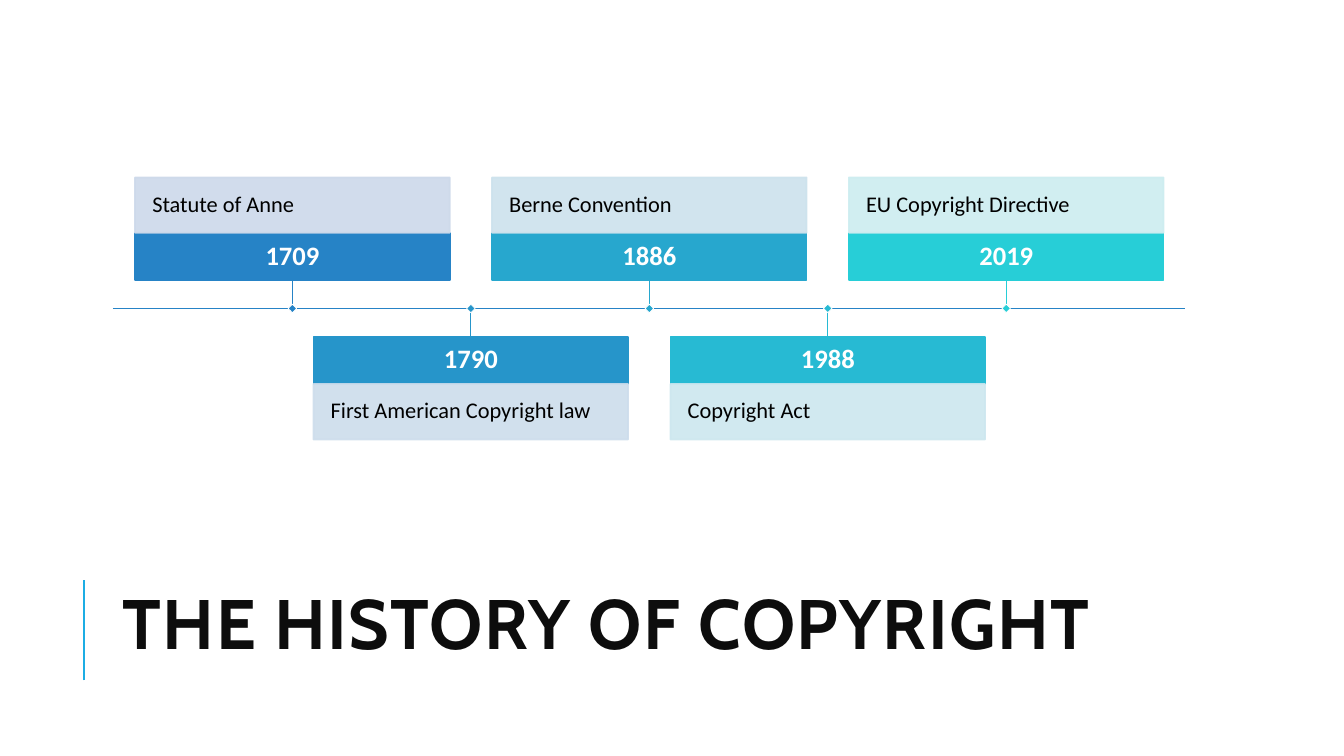
from pptx import Presentation
from pptx.dml.color import RGBColor
from pptx.enum.shapes import MSO_CONNECTOR as Connector, MSO_SHAPE as Shape
from pptx.enum.text import MSO_ANCHOR as Anchor, PP_ALIGN as Align
from pptx.oxml.ns import qn
from pptx.oxml.xmlchemy import OxmlElement
from pptx.util import Pt

PX = 9144  # 100 px to the inch

WHITE = RGBColor(0xFF, 0xFF, 0xFF)
BLACK = RGBColor(0x00, 0x00, 0x00)
TITLE_INK = RGBColor(0x0D, 0x0D, 0x0D)
ACCENT = RGBColor(0x1C, 0xAD, 0xE4)
AXIS = RGBColor(0x26, 0x83, 0xC6)

# Year, event, strong colour, pale colour
EVENTS = [
    ("1709", "Statute of Anne", AXIS, RGBColor(0xCD, 0xD9, 0xEA)),
    ("1790", "First American Copyright law",
     RGBColor(0x26, 0x95, 0xCA), RGBColor(0xCD, 0xDD, 0xEC)),
    ("1886", "Berne Convention",
     RGBColor(0x27, 0xA7, 0xCE), RGBColor(0xCD, 0xE2, 0xED)),
    ("1988", "Copyright Act",
     RGBColor(0x27, 0xBA, 0xD3), RGBColor(0xCD, 0xE7, 0xEF)),
    ("2019", "EU Copyright Directive",
     RGBColor(0x27, 0xCE, 0xD7), RGBColor(0xCD, 0xED, 0xF0)),
]

AXIS_Y = 306
FIRST_LEFT, PITCH, CARD_WIDTH = 134, 177, 312
STEM, YEAR_HEIGHT, EVENT_HEIGHT, MARKER = 28, 47, 55, 6


class TimelineSlide:
    title_font = "Cabin"
    body_font = "Calibri"

    def __init__(self, presentation):
        self.slide = presentation.slides.add_slide(presentation.slide_layouts[6])

    def text(self, shape, words, font, size, color, bold=False,
             align=Align.LEFT, line_spacing=0.9, inset=10, inset_y=None):
        frame = shape.text_frame
        frame.text = words
        frame.word_wrap = True
        frame.vertical_anchor = Anchor.MIDDLE
        frame.margin_left = frame.margin_right = inset * PX
        frame.margin_top = frame.margin_bottom = (
            inset if inset_y is None else inset_y) * PX
        paragraph = frame.paragraphs[0]
        paragraph.alignment = align
        paragraph.line_spacing = line_spacing
        run = paragraph.runs[0]
        run.font.name = font
        run.font.size = Pt(size)
        run.font.bold = bold
        run.font.color.rgb = color
        return run

    def title(self, words, left, top, width, height):
        box = self.slide.shapes.add_textbox(
            left * PX, top * PX, width * PX, height * PX)
        run = self.text(box, words, self.title_font, 50, TITLE_INK, bold=True,
                        line_spacing=0.8, inset_y=5)
        run.font._element.set("spc", "100")

    def rectangle(self, left, top, width, height, fill, line=None,
                  line_width=1.25, opacity=100):
        shape = self.slide.shapes.add_shape(
            Shape.RECTANGLE, left * PX, top * PX, width * PX, height * PX)
        shape.shadow.inherit = False
        shape.fill.solid()
        shape.fill.fore_color.rgb = fill
        shape.line.color.rgb = line or fill
        shape.line.width = Pt(line_width)
        if opacity < 100:
            for color in list(shape._element.spPr.iter(qn("a:srgbClr"))):
                alpha = OxmlElement("a:alpha")
                alpha.set("val", str(opacity * 1000))
                color.append(alpha)
        return shape

    def line(self, x1, y1, x2, y2, color, width):
        connector = self.slide.shapes.add_connector(
            Connector.STRAIGHT, x1 * PX, y1 * PX, x2 * PX, y2 * PX)
        connector.line.color.rgb = color
        connector.line.width = Pt(width)
        connector._element.spPr.append(OxmlElement("a:effectLst"))
        return connector

    def event(self, index, year, name, strong, pale):
        above = index % 2 == 0
        left = FIRST_LEFT + index * PITCH
        center = left + CARD_WIDTH // 2
        if above:
            stem_y = AXIS_Y - STEM
            year_top = stem_y - YEAR_HEIGHT
            event_top = year_top - EVENT_HEIGHT
        else:
            stem_y = year_top = AXIS_Y + STEM
            event_top = year_top + YEAR_HEIGHT

        # Card: year and event name
        year_box = self.rectangle(left, year_top, CARD_WIDTH, YEAR_HEIGHT, strong)
        self.text(year_box, year, self.body_font, 19, WHITE, bold=True,
                  align=Align.CENTER, inset=11)
        event_box = self.rectangle(left, event_top, CARD_WIDTH, EVENT_HEIGHT,
                                   pale, opacity=90)
        self.text(event_box, name, self.body_font, 16, BLACK, inset=17)

        # Stem and marker on the axis
        stem = self.line(center, stem_y, center, AXIS_Y, strong, 0.75)
        stem.begin_connect(year_box, 2 if above else 0)
        marker = self.rectangle(center - MARKER // 2, AXIS_Y - MARKER // 2,
                                MARKER, MARKER, strong, WHITE, 0.5)
        marker.rotation = 45


def main():
    presentation = Presentation()
    presentation.slide_width = 1333 * PX
    presentation.slide_height = 750 * PX
    page = TimelineSlide(presentation)

    # Title with its accent rule
    page.title("THE HISTORY OF COPYRIGHT", 112, 542, 1063, 164)
    page.line(83, 675, 83, 575, ACCENT, 1.5)

    # Timeline
    page.line(112, AXIS_Y, 1175, AXIS_Y, AXIS, 1.25)
    for index, event in enumerate(EVENTS):
        page.event(index, *event)

    presentation.save("out.pptx")


if __name__ == "__main__":
    main()
